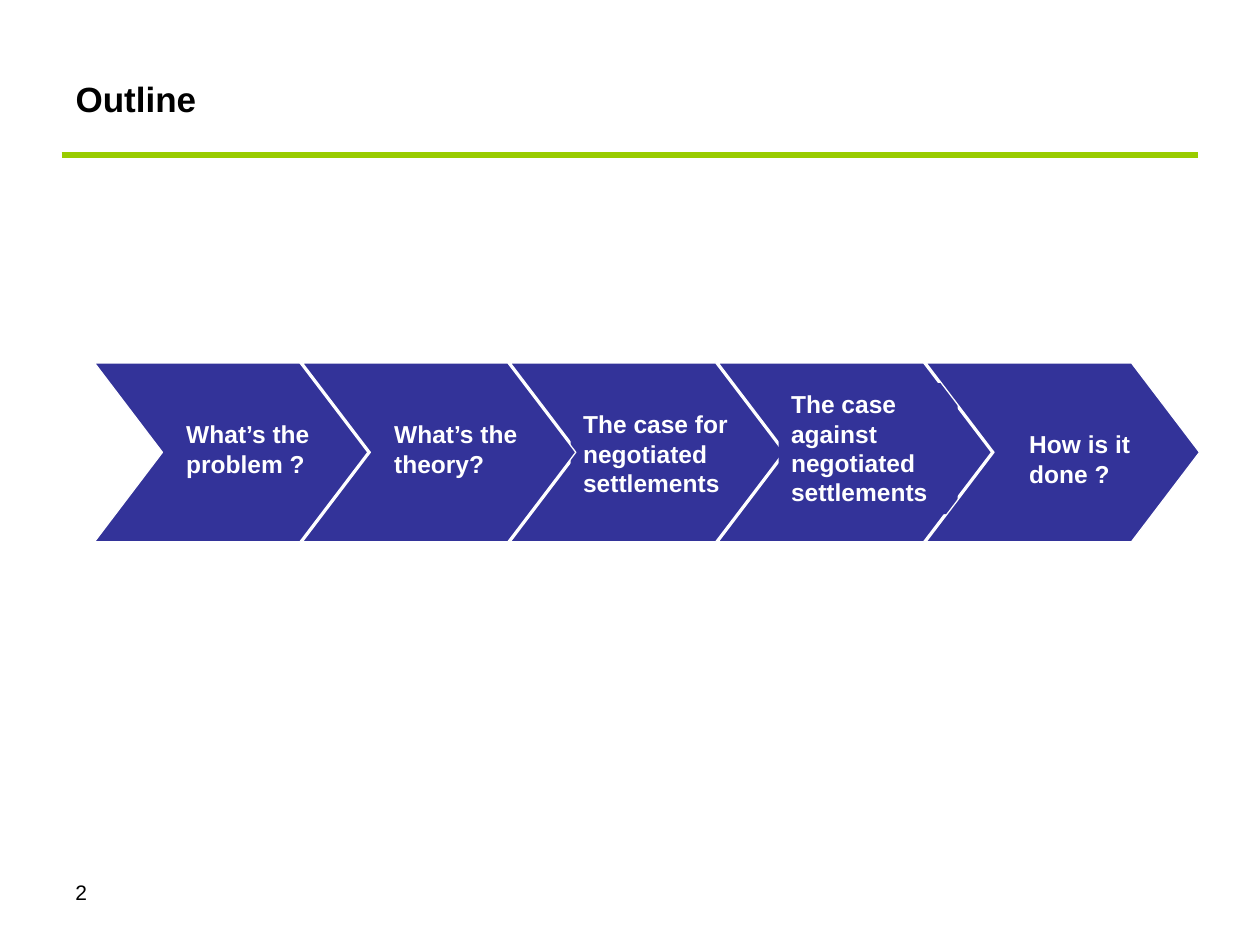
from pptx import Presentation
from pptx import util as u
from pptx.dml.color import RGBColor
from pptx.enum import shapes, text
from pptx.oxml.ns import qn
from lxml import etree

COLORS = {"rule": "99CC00", "step": "333399", "light": "FFFFFF", "dark": "000000"}
FIRST_LEFT, PITCH = 0.75, 1.65
STEP_TOP, STEP_W, STEP_H = 2.88, 2.17, 1.42

# (step position, wording, label box, filled label), from back to front
STEPS = [
    (0, "What’s the problem ?", (1.38, 3.28, 1.34, 0.57), False),
    (2, "The case for negotiated settlements", (4.53, 3.2, 1.36, 0.81), True),
    (1, "What’s the theory?", (3.03, 3.28, 1.2, 0.57), True),
    (3, "The case against negotiated settlements", (6.18, 3.04, 1.42, 1.04), True),
    (4, "How is it done ?", (8.07, 3.36, 1.11, 0.57), True),
]


def rgb(name):
    return RGBColor.from_string(COLORS[name])


def inches(box):
    return [u.Inches(v) for v in box]


def write(sp, wording, size, color, bold=False, anchor=text.MSO_ANCHOR.TOP):
    tf = sp.text_frame
    tf.word_wrap = True
    tf.vertical_anchor = anchor
    p = tf.paragraphs[0]
    p.text = wording
    p.alignment = text.PP_ALIGN.LEFT
    p.font.name = "Arial"
    p.font.size = u.Pt(size)
    p.font.bold = bold
    p.font.color.rgb = rgb(color)


def add_title(s, wording):
    sp = s.shapes.title
    sp.left, sp.top, sp.width, sp.height = inches((0.5, 0.42, 8.26, 0.73))
    write(sp, wording, 20, "dark", True, text.MSO_ANCHOR.MIDDLE)


def add_rule(s):
    line = s.shapes.add_connector(
        shapes.MSO_CONNECTOR.STRAIGHT, *inches((0.49, 1.23, 9.51, 1.23)))
    line.line.color.rgb = rgb("rule")
    line.line.width = u.Pt(3)
    etree.SubElement(line._element.spPr, qn("a:effectLst"))


def add_chevron(s, position):
    left = FIRST_LEFT + position * PITCH
    sp = s.shapes.add_shape(
        shapes.MSO_SHAPE.CHEVRON, *inches((left, STEP_TOP, STEP_W, STEP_H)))
    sp.adjustments[0] = 0.38
    sp.shadow.inherit = False
    sp.fill.solid()
    sp.fill.fore_color.rgb = rgb("step")
    sp.line.color.rgb = rgb("light")
    sp.line.width = u.Pt(0.75)


def add_label(s, wording, box, filled):
    sp = s.shapes.add_textbox(*inches(box))
    if filled:
        sp.fill.solid()
        sp.fill.fore_color.rgb = rgb("step")
    write(sp, wording, 14, "light", True)
    sp.text_frame.auto_size = text.MSO_AUTO_SIZE.SHAPE_TO_FIT_TEXT


def add_page_number(s, number):
    sp = s.shapes.add_textbox(*inches((0.5, 6.93, 0.8, 0.32)))
    write(sp, number, 12, "dark")


def main():
    prs = Presentation()
    prs.slide_width, prs.slide_height = inches((10, 7.5))
    s = prs.slides.add_slide(prs.slide_layouts[5])
    add_rule(s)
    add_page_number(s, "2")
    for position, wording, box, filled in STEPS:
        add_chevron(s, position)
        add_label(s, wording, box, filled)
    add_title(s, "Outline")
    prs.save("out.pptx")


if __name__ == "__main__":
    main()
